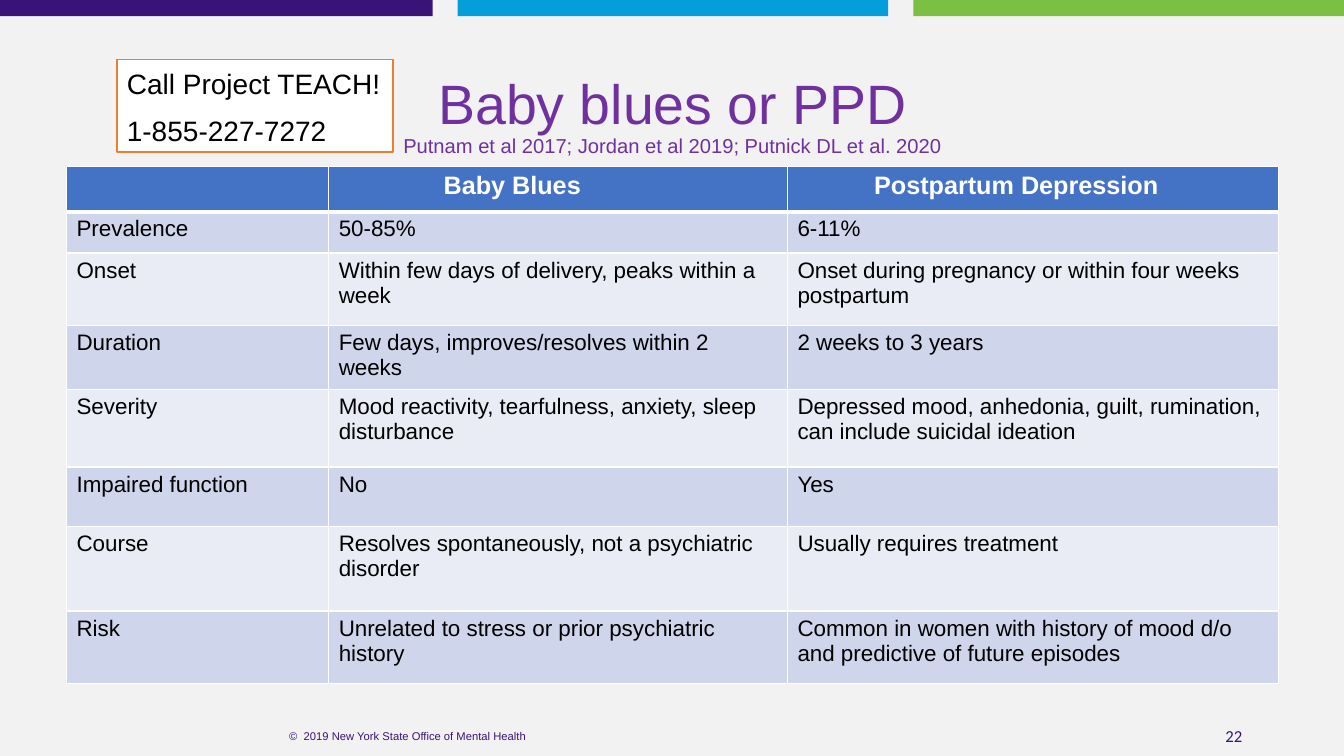
import pptx
import pptx.util
import pptx.oxml
import pptx.oxml.ns
import pptx.dml.color
import pptx.enum.shapes
import pptx.enum.text

RGB = pptx.dml.color.RGBColor
ALIGN = pptx.enum.text.PP_ALIGN
ANCHOR = pptx.enum.text.MSO_ANCHOR
RECT = pptx.enum.shapes.MSO_SHAPE.RECTANGLE

GREY = RGB(0xF2, 0xF2, 0xF2)
INDIGO = RGB(0x39, 0x13, 0x78)
CYAN = RGB(0x04, 0x9F, 0xDA)
GREEN = RGB(0x7B, 0xBF, 0x43)
PURPLE = RGB(0x70, 0x30, 0xA0)
ORANGE = RGB(0xED, 0x7D, 0x31)
BLUE = RGB(0x44, 0x72, 0xC4)
DARK = RGB(0xCF, 0xD5, 0xEA)
LIGHT = RGB(0xE9, 0xEB, 0xF5)
WHITE = RGB(0xFF, 0xFF, 0xFF)
BLACK = RGB(0, 0, 0)

COLS = [260, 455, 487]
HEADS = ["", "Baby Blues", "Postpartum Depression"]
INSETS = [10, 114, 86]
ROWS = [
    (41, "Prevalence", "50-85%", "6-11%"),
    (72, "Onset", "Within few days of delivery, peaks within a week",
     "Onset during pregnancy or within four weeks postpartum"),
    (60, "Duration", "Few days, improves/resolves within 2 weeks",
     "2 weeks to 3 years"),
    (77, "Severity", "Mood reactivity, tearfulness, anxiety, sleep disturbance",
     "Depressed mood, anhedonia, guilt, rumination, can include suicidal ideation"),
    (59, "Impaired function", "No", "Yes"),
    (84, "Course", "Resolves spontaneously, not a psychiatric disorder",
     "Usually requires treatment"),
    (72, "Risk", "Unrelated to stress or prior psychiatric history",
     "Common in women with history of mood d/o and predictive of future episodes"),
]


def px(count):
    """Turn px into EMU, 100 px to the inch."""
    return pptx.util.Emu(count * 9144)


def style(para, size, color, face="Arial", bold=False):
    """Format every run of a paragraph."""
    for run in para.runs:
        font = run.font
        font.size, font.name, font.bold = pptx.util.Pt(size), face, bold
        font.color.rgb = color


def block(slide, box, fill):
    """Draw a plain filled rectangle."""
    shape = slide.shapes.add_shape(RECT, *map(px, box))
    shape.shadow.inherit = False
    shape.fill.solid()
    shape.fill.fore_color.rgb = fill
    shape.line.fill.background()
    return shape


def label(slide, box, text, align):
    """Add a wrapping, vertically centred text box."""
    frame = slide.shapes.add_textbox(*map(px, box)).text_frame
    frame.word_wrap = True
    frame.vertical_anchor = ANCHOR.MIDDLE
    frame.text = text
    for para in frame.paragraphs:
        para.alignment = align
    return frame


def banner(slide, box):
    """Draw the three colour bars along the top."""
    left, top, width, height = box
    bars = [(0, 429, INDIGO), (454, 427, CYAN), (906, width - 906, GREEN)]
    for start, span, fill in bars:
        block(slide, (left + start, top, span, height), fill)


def title(slide, box):
    """Place the heading with its sources beneath."""
    frame = label(slide, box, "Baby blues or PPD\nPutnam et al 2017; "
                  "Jordan et al 2019; Putnick DL et al. 2020", ALIGN.CENTER)
    frame.vertical_anchor = ANCHOR.TOP
    frame.margin_top = frame.margin_bottom = 0
    for para, size in zip(frame.paragraphs, (39.6, 14.4)):
        para.line_spacing = 0.9
        style(para, size, PURPLE)


def callout(slide, box):
    """Draw the boxed phone number."""
    shape = block(slide, box, WHITE)
    shape.line.color.rgb = ORANGE
    shape.line.width = pptx.util.Pt(1)
    frame = shape.text_frame
    frame.word_wrap = False
    frame.vertical_anchor = ANCHOR.MIDDLE
    frame.text = "Call Project TEACH!\n1-855-227-7272"
    for para in frame.paragraphs:
        para.alignment = ALIGN.LEFT
        para.line_spacing = 1.07
        para.space_after = pptx.util.Pt(8)
        style(para, 20, BLACK)


def border(cell, above, below):
    """Give a cell white edges, with top and bottom widths in points."""
    props = cell._tc.get_or_add_tcPr()
    for side, width in zip("LRTB", (1, 1, above, below)):
        props.append(pptx.oxml.parse_xml(
            f'<a:ln{side} {pptx.oxml.ns.nsdecls("a")} w="{width * 12700}">'
            f'<a:solidFill><a:srgbClr val="{WHITE}"/></a:solidFill></a:ln{side}>'))


def compare(slide, box):
    """Build the comparison table."""
    lines = [(45, *HEADS)] + ROWS
    table = slide.shapes.add_table(len(lines), len(COLS), *map(px, box)).table
    for col, width in zip(table.columns, COLS):
        col.width = px(width)
    for i, (height, *texts) in enumerate(lines):
        table.rows[i].height = px(height)
        head = i == 0
        fill = BLUE if head else DARK if i % 2 else LIGHT
        for j, text in enumerate(texts):
            cell = table.cell(i, j)
            border(cell, 3 if i == 1 else 1, 3 if head else 1)
            cell.fill.solid()
            cell.fill.fore_color.rgb = fill
            cell.text = text
            if head:
                cell.margin_left = px(INSETS[j])
            style(cell.text_frame.paragraphs[0], 18 if head else 16,
                  WHITE if head else BLACK, bold=head)


def footer(slide, box):
    """Place the copyright line and the page number."""
    left, top, width, height = box
    note = label(slide, (left, top, 447, height),
                 "©  2019 New York State Office of Mental Health", ALIGN.CENTER)
    style(note.paragraphs[0], 8, INDIGO)
    page = label(slide, (left + width - 300, top, 300, height), "22", ALIGN.RIGHT)
    style(page.paragraphs[0], 12, INDIGO, "Calibri")


def main():
    """Build and save the slide."""
    deck = pptx.Presentation()
    deck.slide_width, deck.slide_height = px(1333), px(750)
    slide = deck.slides.add_slide(deck.slide_layouts[6])
    slide.background.fill.solid()
    slide.background.fill.fore_color.rgb = GREY
    banner(slide, (0, 0, 1333, 16))
    footer(slide, (181, 710, 1061, 40))
    title(slide, (92, 76, 1150, 80))
    compare(slide, (66, 165, sum(COLS), 510))
    callout(slide, (116, 59, 274, 92))
    deck.save("out.pptx")


if __name__ == "__main__":
    main()
